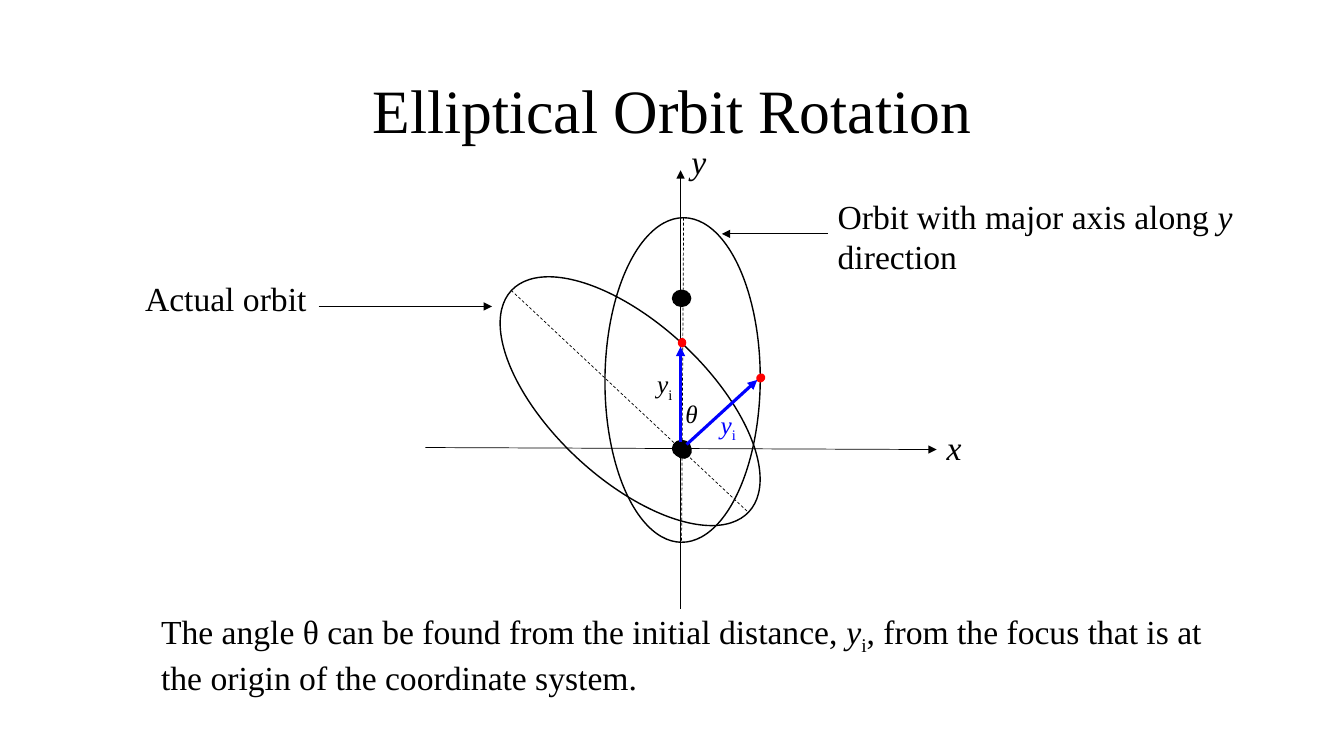
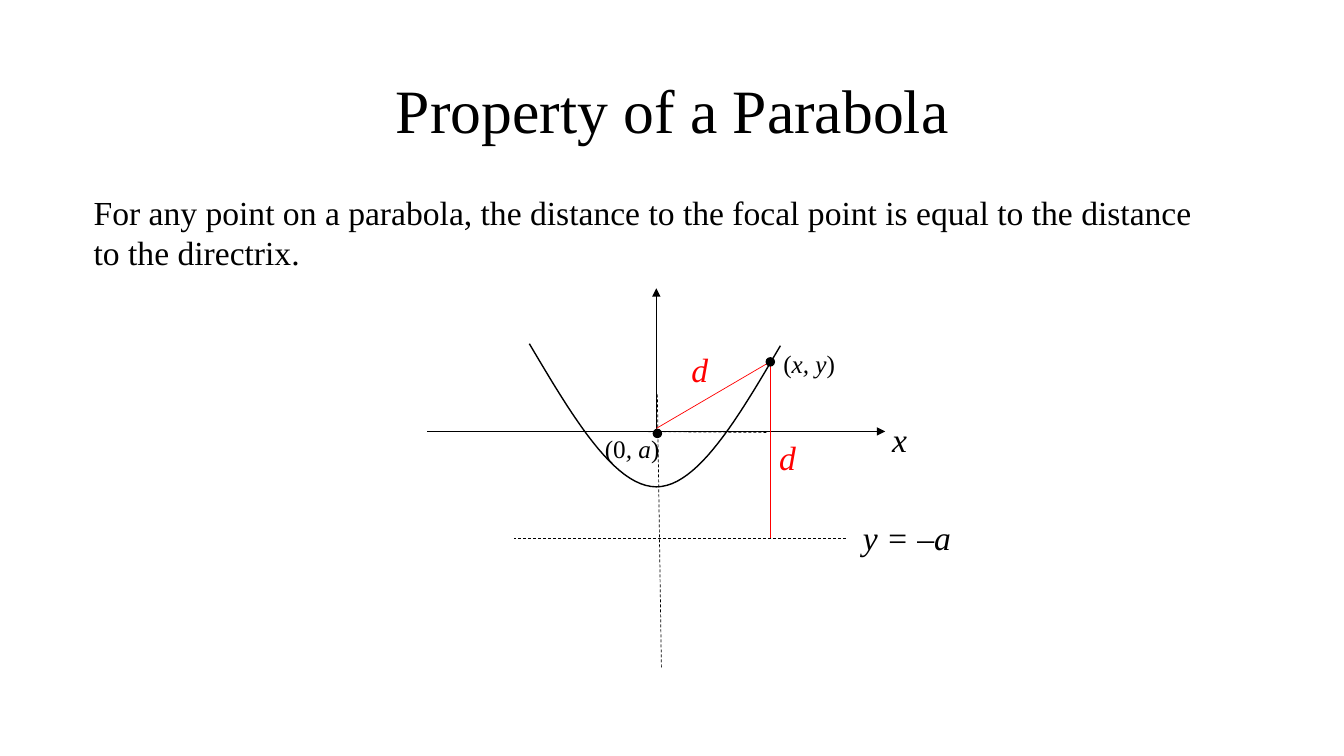
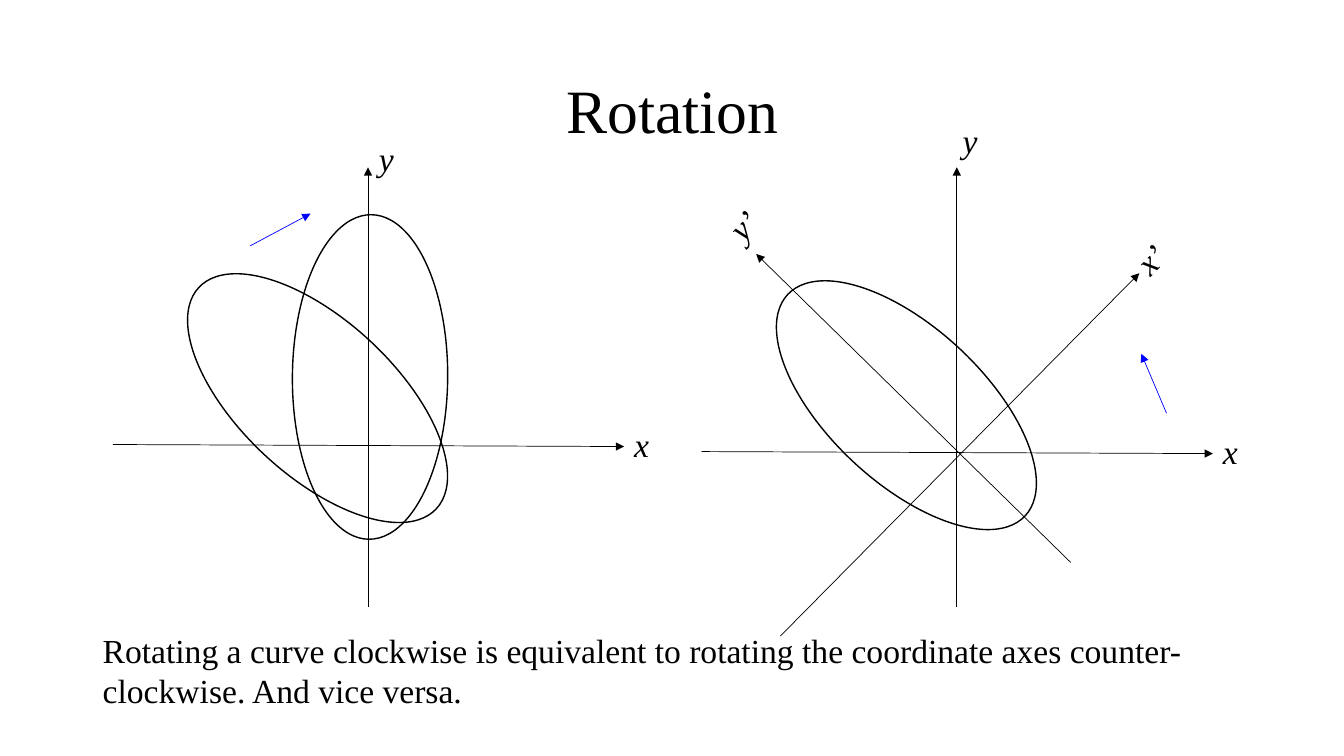
from dataclasses import dataclass
from typing import NamedTuple

from lxml import etree
from pptx import Presentation
from pptx import util as u
from pptx.dml.color import RGBColor
from pptx.enum import dml, shapes, text
from pptx.oxml import ns

PX = 9144  # EMU per px, 100 px to the inch
FONT = "Times New Roman"
BLACK, RED, BLUE = "000000", "FF0000", "0000FF"
TITLE_FRAME = (92, 40, 1150, 145)
ORBIT_SIZE = (154, 322)


class Span(NamedTuple):
    text: str
    italic: bool = False
    sub: bool = False


@dataclass
class Label:
    frame: tuple[int, int, int, int]
    lines: list[list[Span]]
    size: int = 24
    color: str = BLACK
    turn: float = 0


@dataclass
class Line:
    start: tuple[int, int]
    end: tuple[int, int]
    color: str = BLACK
    width: float = 0.5
    dashed: bool = False
    arrow: bool = False


@dataclass
class Ellipse:
    frame: tuple[int, int, int, int]
    fill: str | None = None
    turn: float = 0


def px(*lengths: float) -> list[int]:
    return [round(length * PX) for length in lengths]


def rgb(color: str) -> RGBColor:
    return RGBColor.from_string(color)


def add_span(para, words: str, *, size: int, color: str = BLACK,
             italic: bool = False, sub: bool = False) -> None:
    span = para.add_run()
    span.text = words
    font = span.font
    font.name, font.size, font.italic = FONT, u.Pt(size), italic
    font.color.rgb = rgb(color)
    if sub:
        span._r.get_or_add_rPr().set("baseline", "-25000")


def add_label(page, label: Label) -> None:
    box = page.shapes.add_textbox(*px(*label.frame))
    box.rotation = label.turn
    frame = box.text_frame
    frame.word_wrap = False
    frame.auto_size = text.MSO_AUTO_SIZE.SHAPE_TO_FIT_TEXT
    for index, line in enumerate(label.lines):
        para = frame.add_paragraph() if index else frame.paragraphs[0]
        for span in line:
            add_span(para, span.text, size=label.size, color=label.color,
                     italic=span.italic, sub=span.sub)


def add_symbol(page, symbol: str, frame: tuple[int, int, int, int],
               size: int = 24, color: str = BLACK, turn: float = 0) -> None:
    """Add a one-line label set in italics."""
    add_label(page, Label(frame, [[Span(symbol, True)]], size, color, turn))


def add_line(page, line: Line) -> None:
    connector = page.shapes.add_connector(
        shapes.MSO_CONNECTOR.STRAIGHT, *px(*line.start, *line.end))
    stroke = connector.line
    stroke.color.rgb = rgb(line.color)
    stroke.width = u.Pt(line.width)
    if line.dashed:
        stroke.dash_style = dml.MSO_LINE.DASH
    outline = connector._element.spPr.find(ns.qn("a:ln"))
    if line.arrow:
        etree.SubElement(outline, ns.qn("a:tailEnd"), type="triangle")
    etree.SubElement(connector._element.spPr, ns.qn("a:effectLst"))


def style_outline(shape, fill: str | None = None) -> None:
    shape.shadow.inherit = False
    if fill:
        shape.fill.solid()
        shape.fill.fore_color.rgb = rgb(fill)
    else:
        shape.fill.background()
    shape.line.color.rgb = rgb(fill or BLACK)
    shape.line.width = u.Pt(1)


def add_ellipse(page, ellipse: Ellipse) -> None:
    shape = page.shapes.add_shape(shapes.MSO_SHAPE.OVAL, *px(*ellipse.frame))
    shape.rotation = ellipse.turn
    style_outline(shape, ellipse.fill)


def add_curve(page, start: tuple[int, int],
              bends: list[tuple[tuple[int, int], ...]], steps: int = 24) -> None:
    """Draw cubic curves; each bend holds two control points and an end."""
    points = []
    knot = start
    for bend in bends:
        for step in range(1, steps + 1):
            t = step / steps
            weights = ((1 - t) ** 3, 3 * t * (1 - t) ** 2, 3 * t * t * (1 - t), t ** 3)
            points.append(px(*(
                sum(weight * value for weight, value in zip(weights, values))
                for values in zip(knot, *bend))))
        knot = bend[-1]
    builder = page.shapes.build_freeform(*px(*start))
    builder.add_line_segments(points, close=False)
    style_outline(builder.convert_to_shape())


def add_axes(page, origin: tuple[int, int], bottom: int, top: int,
             y_label: tuple[int, int]) -> None:
    x, y = origin
    add_line(page, Line((x - 253, y - 1), (x + 254, y + 1), arrow=True))
    add_line(page, Line((x, bottom), (x, top), arrow=True))
    add_symbol(page, "x", (x + 254, y - 26, 35, 50))
    add_symbol(page, "y", (*y_label, 35, 50))


def add_tilted_orbit(page, origin: tuple[int, int]) -> None:
    x, y = origin
    add_ellipse(page, Ellipse((x - 127, y - 208, *ORBIT_SIZE), turn=313))


def add_upright_orbit(page, origin: tuple[int, int]) -> None:
    x, y = origin
    add_ellipse(page, Ellipse((x - 75, y - 229, *ORBIT_SIZE), turn=0.4))


def add_page(deck, title: str):
    page = deck.slides.add_slide(deck.slide_layouts[5])
    holder = page.shapes.title
    holder.left, holder.top, holder.width, holder.height = px(*TITLE_FRAME)
    frame = holder.text_frame
    frame.word_wrap = True
    frame.auto_size = text.MSO_AUTO_SIZE.NONE
    frame.vertical_anchor = text.MSO_ANCHOR.MIDDLE
    para = frame.paragraphs[0]
    para.alignment = text.PP_ALIGN.CENTER
    para.line_spacing = 0.9
    add_span(para, title, size=44)
    return page


def build_orbit_page(deck) -> None:
    page = add_page(deck, "Elliptical Orbit Rotation")
    origin = (675, 445)
    add_axes(page, origin, 604, 169, (676, 135))
    add_tilted_orbit(page, origin)
    add_upright_orbit(page, origin)
    for line in (
        Line((507, 288), (742, 508), dashed=True),
        Line((678, 216), (676, 537), dashed=True),
    ):
        add_line(page, line)
    for dot in (
        Ellipse((673, 336, 7, 8), RED),
        Ellipse((751, 371, 7, 8), RED, 47.4),
        Ellipse((667, 437, 18, 16), BLACK),
        Ellipse((668, 438, 18, 16), BLACK, 47.4),
        Ellipse((667, 288, 18, 16), BLACK),
    ):
        add_ellipse(page, dot)
    for line in (
        Line((675, 439), (675, 344), BLUE, 2.25, arrow=True),
        Line((681, 441), (751, 377), BLUE, 2.25, arrow=True),
        Line((316, 304), (488, 304), arrow=True),
        Line((821, 232), (716, 232), arrow=True),
    ):
        add_line(page, line)
    add_symbol(page, "θ", (670, 390, 33, 40), 18)
    distance = [Span("y", True), Span("i", sub=True)]
    for label in (
        Label((642, 361, 36, 40), [distance], 18),
        Label((705, 401, 36, 40), [distance], 18, BLUE),
        Label((134, 271, 182, 50), [[Span("Actual orbit")]]),
        Label((821, 189, 415, 91), [
            [Span("Orbit with major axis along "), Span("y", True)],
            [Span("direction")]]),
        Label((150, 601, 1054, 91), [
            [Span("The angle θ can be found from the initial distance, "),
             *distance, Span(", from the focus that is at")],
            [Span("the origin of the coordinate system.")]]),
    ):
        add_label(page, label)


def build_parabola_page(deck) -> None:
    page = add_page(deck, "Property of a Parabola")
    add_curve(page, (525, 341), [
        ((567, 412), (609, 483), (651, 483)),
        ((692, 483), (733, 413), (774, 343))])
    for line in (
        Line((656, 662), (652, 391), dashed=True),
        Line((839, 534), (510, 534), dashed=True),
        Line((760, 429), (607, 428), dashed=True),
        Line((424, 428), (878, 428), arrow=True),
        Line((651, 432), (651, 286), arrow=True),
        Line((651, 425), (762, 360), RED),
        Line((764, 534), (764, 363), RED),
    ):
        add_line(page, line)
    for left, top in ((648, 426), (760, 355)):
        add_ellipse(page, Ellipse((left, top, 8, 8), BLACK))
    for label in (
        Label((83, 185, 1119, 91), [
            [Span("For any point on a parabola, the distance to the focal "
                  "point is equal to the distance")],
            [Span("to the directrix.")]]),
        Label((590, 425, 75, 40), [[Span("(0"), Span(", a", True), Span(")")]], 18),
        Label((767, 341, 72, 40), [[Span("("), Span("x, y", True), Span(")")]], 18),
    ):
        add_label(page, label)
    add_symbol(page, "x", (875, 411, 35, 50))
    add_symbol(page, "y = –a", (846, 508, 108, 50))
    for left, top in ((676, 341), (763, 429)):
        add_symbol(page, "d", (left, top, 37, 50), color=RED)


def build_rotation_page(deck) -> None:
    page = add_page(deck, "Rotation")
    curve_origin, axes_origin = (365, 442), (949, 449)
    add_axes(page, curve_origin, 602, 166, (366, 132))
    add_axes(page, axes_origin, 602, 166, (945, 114))
    for origin in (curve_origin, axes_origin):
        add_tilted_orbit(page, origin)
    add_upright_orbit(page, curve_origin)
    for line in (
        Line((248, 244), (308, 212), BLUE, arrow=True),
        Line((774, 631), (1130, 271), arrow=True),
        Line((1062, 558), (750, 252), arrow=True),
        Line((1157, 410), (1132, 351), BLUE, arrow=True),
    ):
        add_line(page, line)
    add_symbol(page, "x’", (1118, 232, 46, 50), turn=314.5)
    add_symbol(page, "y’", (714, 198, 46, 50), turn=314.5)
    add_label(page, Label((92, 620, 1099, 91), [
        [Span("Rotating a curve clockwise is equivalent to rotating the "
              "coordinate axes counter-")],
        [Span("clockwise. And vice versa.")]]))


def main() -> None:
    deck = Presentation()
    deck.slide_width, deck.slide_height = px(1333, 750)
    build_orbit_page(deck)
    build_parabola_page(deck)
    build_rotation_page(deck)
    deck.save("out.pptx")


if __name__ == "__main__":
    main()
